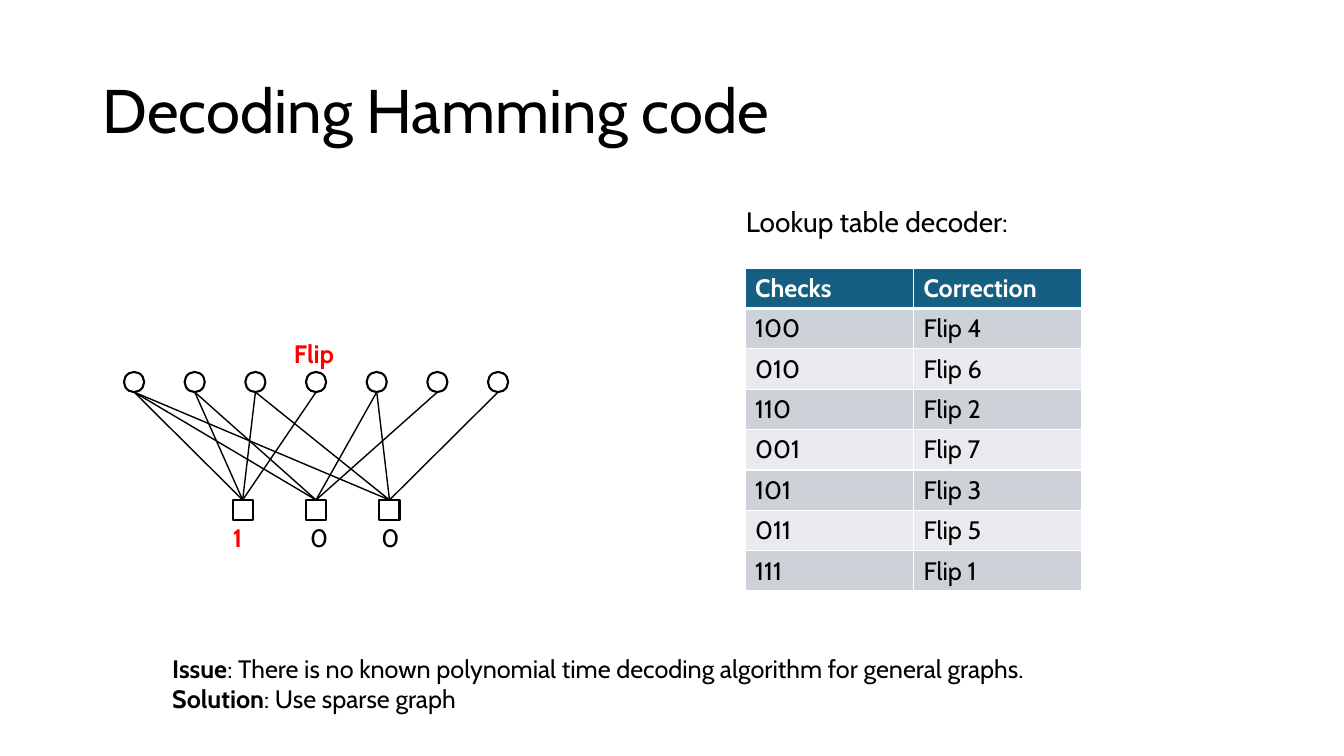
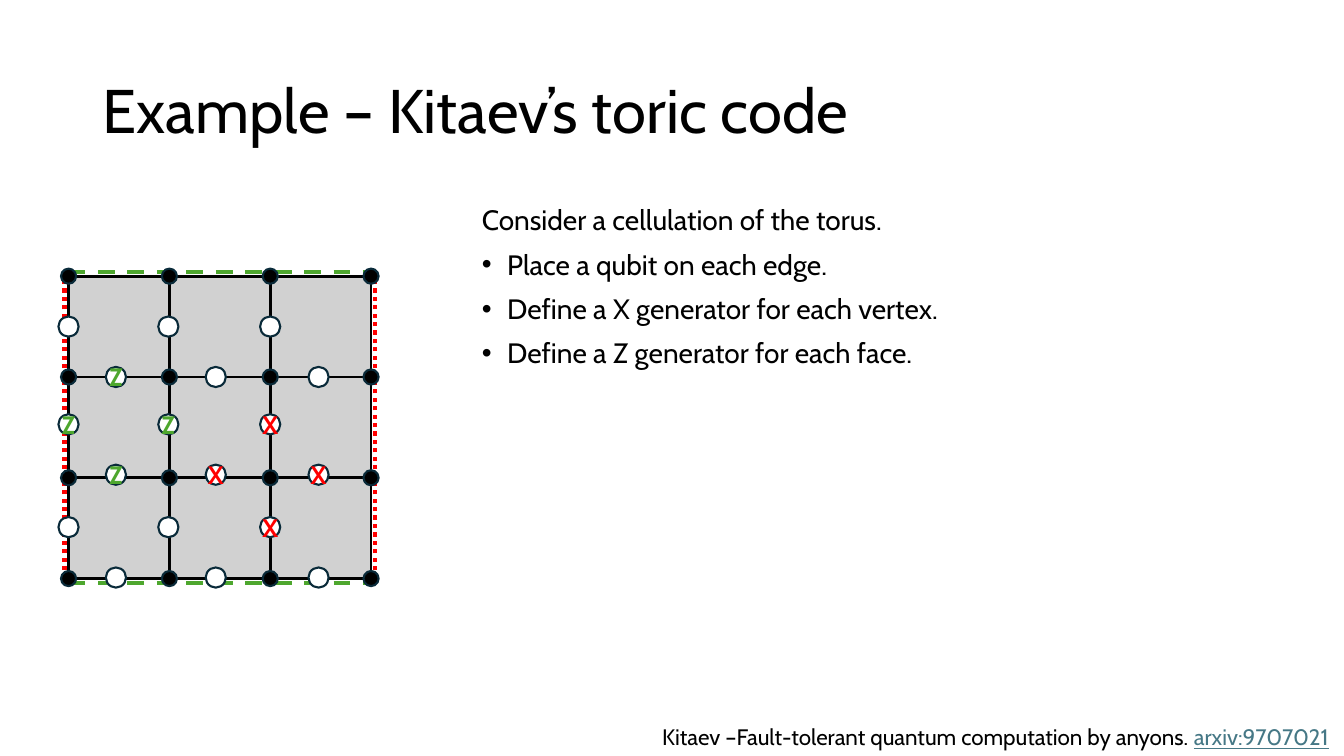
"""Build two slides on decoding the Hamming code and on the toric code."""
from dataclasses import dataclass

from lxml import etree
from pptx import Presentation
from pptx import util as u
from pptx.dml.color import RGBColor
from pptx.enum import dml, shapes, text
from pptx.oxml import ns, xmlchemy

FONT = "Cabin"
BLACK = RGBColor(0x00, 0x00, 0x00)
WHITE = RGBColor(0xFF, 0xFF, 0xFF)
RED = RGBColor(0xFF, 0x00, 0x00)
GREEN = RGBColor(0x4E, 0xA7, 0x2E)
NAVY = RGBColor(0x09, 0x2A, 0x39)
TEAL = RGBColor(0x15, 0x60, 0x82)
LINK = RGBColor(0x46, 0x78, 0x86)
FACE = RGBColor(0xD1, 0xD1, 0xD1)
BANDS = (RGBColor(0xE8, 0xEA, 0xED), RGBColor(0xCC, 0xD2, 0xD8))

NODE = 0.2
VERTEX = 0.15
TITLE_ONLY, TITLE_AND_BODY = 5, 1
CHECK_BITS = ((0, 1, 2, 3), (0, 1, 4, 5), (0, 2, 4, 6))
LOOKUP = (("Checks", "Correction"), ("100", "Flip 4"), ("010", "Flip 6"),
          ("110", "Flip 2"), ("001", "Flip 7"), ("101", "Flip 3"),
          ("011", "Flip 5"), ("111", "Flip 1"))


@dataclass
class Box:
    """A region of a slide, in inches."""

    left: float
    top: float
    width: float
    height: float

    def emu(self):
        """Return the region as lengths for python-pptx."""
        return [u.Inches(n) for n in (self.left, self.top, self.width, self.height)]

    def point(self, column, row, columns, rows):
        """Return the point at a column and row of a grid over the region."""
        return (self.left + column * self.width / columns,
                self.top + row * self.height / rows)


SLIDE = Box(0, 0, 13.33, 7.5)
TITLE = Box(0.92, 0.4, 11.5, 1.45)


def around(centre, width, height):
    """Return the box of a given size about a point."""
    return Box(centre[0] - width / 2, centre[1] - height / 2, width, height)


def add_span(para, words, size, color=BLACK, bold=False, underline=False):
    """Add one formatted run to a paragraph."""
    span = para.add_run()
    span.text = words
    span.font.name = FONT
    span.font.size = u.Pt(size)
    span.font.color.rgb = color
    span.font.bold = bold
    if underline:
        span.font.underline = True


def add_text(page, box, lines, size, align=text.PP_ALIGN.LEFT):
    """Add a text box; each line is a list of (words, format) spans."""
    area = page.shapes.add_textbox(*box.emu())
    area.text_frame.word_wrap = True
    for index, spans in enumerate(lines):
        para = area.text_frame.paragraphs[0] if index == 0 else area.text_frame.add_paragraph()
        para.alignment = align
        for words, style in spans:
            add_span(para, words, size, **style)
    return area


def add_label(page, centre, words, color, bold=True, width=0.4):
    """Add a short centred label about a point."""
    area = add_text(page, around(centre, width, 0.4), [[(words, {"color": color, "bold": bold})]],
                    18, text.PP_ALIGN.CENTER)
    area.text_frame.margin_left = area.text_frame.margin_right = 0


def add_mark(parent, kind, box, fill, outline):
    """Add a filled preset shape with a thin outline."""
    mark = parent.shapes.add_shape(kind, *box.emu())
    mark.shadow.inherit = False
    mark.fill.solid()
    mark.fill.fore_color.rgb = fill
    mark.line.color.rgb = outline
    mark.line.width = u.Pt(1.5)


def add_line(parent, start, end, weight, color=BLACK, dash=None):
    """Add a straight line between two points."""
    ends = [u.Inches(n) for n in (*start, *end)]
    line = parent.shapes.add_connector(shapes.MSO_CONNECTOR.STRAIGHT, *ends)
    line.line.color.rgb = color
    line.line.width = u.Pt(weight)
    if dash:
        line.line.dash_style = dash
    etree.SubElement(line._element.spPr, ns.qn("a:effectLst"))


def add_page(deck, layout, title):
    """Add a slide with the shared title style."""
    page = deck.slides.add_slide(deck.slide_layouts[layout])
    head = page.shapes.title
    head.left, head.top, head.width, head.height = TITLE.emu()
    frame = head.text_frame
    frame.auto_size = text.MSO_AUTO_SIZE.NONE
    frame.vertical_anchor = text.MSO_ANCHOR.MIDDLE
    para = frame.paragraphs[0]
    para.alignment = text.PP_ALIGN.LEFT
    para.line_spacing = 0.9
    add_span(para, title, 44)
    return page


def fill_body(page, box, lines):
    """Fill the body placeholder with a lead line and bullets below it."""
    body = page.placeholders[1]
    body.left, body.top, body.width, body.height = box.emu()
    frame = body.text_frame
    frame.auto_size = text.MSO_AUTO_SIZE.NONE
    for index, words in enumerate(lines):
        para = frame.add_paragraph() if index else frame.paragraphs[0]
        para.line_spacing = 0.9
        para.space_before = u.Pt(10)
        indent = u.Inches(0.25) if index else 0
        props = para._p.get_or_add_pPr()
        props.set("marL", str(indent))
        props.set("indent", str(-indent))
        if index:
            etree.SubElement(props, ns.qn("a:buFont"), typeface="Arial")
            etree.SubElement(props, ns.qn("a:buChar"), char="•")
        else:
            etree.SubElement(props, ns.qn("a:buNone"))
        add_span(para, words, 20)


def draw_tanner_graph(page, box):
    """Draw seven bits above three checks, joined by the check matrix."""
    graph = page.shapes.add_group_shape()
    bits = [box.point(column, 0, 6, 1) for column in range(7)]
    checks = [box.point(1.79 + 1.21 * column, 1, 6, 1) for column in range(3)]
    for (x, y), members in zip(checks, CHECK_BITS):
        for bit in members:
            add_line(graph, (x, y - NODE / 2), (bits[bit][0], bits[bit][1] + NODE / 2), 1)
    for kind, centres in ((shapes.MSO_SHAPE.OVAL, bits), (shapes.MSO_SHAPE.RECTANGLE, checks)):
        for centre in centres:
            add_mark(graph, kind, around(centre, NODE, NODE), WHITE, BLACK)
    add_label(page, (bits[3][0] - 0.02, bits[3][1] - 0.28), "Flip", RED, width=0.7)
    for (x, y), words, shift in zip(checks, "100", (-0.05, 0.03, 0.01)):
        flagged = words == "1"
        add_label(page, (x + shift, y + 0.27), words, RED if flagged else BLACK, flagged)


def set_borders(cell, bottom):
    """Give a cell white borders, with its own bottom weight."""
    props = cell._tc.get_or_add_tcPr()
    for index, (side, weight) in enumerate((("L", 1), ("R", 1), ("T", 1), ("B", bottom))):
        border = xmlchemy.OxmlElement(f"a:ln{side}")
        border.set("w", str(u.Pt(weight)))
        fill = etree.SubElement(border, ns.qn("a:solidFill"))
        etree.SubElement(fill, ns.qn("a:srgbClr"), val=str(WHITE))
        props.insert(index, border)


def draw_lookup_table(page, box):
    """Draw the table of checks and corrections."""
    grid = page.shapes.add_table(len(LOOKUP), 2, *box.emu()).table
    for row, record in enumerate(LOOKUP):
        header = row == 0
        for column, words in enumerate(record):
            cell = grid.cell(row, column)
            cell.fill.solid()
            cell.fill.fore_color.rgb = TEAL if header else BANDS[row % 2]
            set_borders(cell, 3 if header or row == 0 else 1)
            add_span(cell.text_frame.paragraphs[0], words, 18,
                     WHITE if header else BLACK, header)


def draw_lattice(page, box):
    """Draw the glued square lattice with its vertices and edges."""
    sheet = page.shapes.add_group_shape()
    add_mark(sheet, shapes.MSO_SHAPE.RECTANGLE, box, FACE, NAVY)
    right, bottom = box.left + box.width, box.top + box.height
    gap = 0.04
    for y in (box.top - gap, bottom + gap):
        add_line(sheet, (box.left, y), (right, y), 3, GREEN, dml.MSO_LINE.DASH)
    for x in (box.left - gap, right + gap):
        add_line(sheet, (x, bottom), (x, box.top), 3, RED, dml.MSO_LINE.ROUND_DOT)
    net = page.shapes.add_group_shape()
    trim = VERTEX / 2
    for major in range(4):
        for minor in range(3):
            x, y = box.point(minor, major, 3, 3)
            add_line(net, (x + trim, y), (x + box.width / 3 - trim, y), 2)
            x, y = box.point(major, minor, 3, 3)
            add_line(net, (x, y + trim), (x, y + box.height / 3 - trim), 2)
    for column in range(4):
        for row in range(4):
            centre = box.point(column, row, 3, 3)
            add_mark(net, shapes.MSO_SHAPE.OVAL, around(centre, VERTEX, VERTEX), BLACK, NAVY)


def draw_qubits(page, box):
    """Draw a qubit on each edge and letter one X and one Z generator."""
    upright = [[box.point(x, y, 3, 3) for x in (0, 0.99, 2)] for y in (0.5, 1.47, 2.49)]
    level = [[box.point(x, y, 3, 3) for x in (0.47, 1.46, 2.48)] for y in (1, 1.97, 2.99)]
    qubits = page.shapes.add_group_shape()
    for row in upright + level:
        for centre in row:
            add_mark(qubits, shapes.MSO_SHAPE.OVAL, around(centre, NODE, NODE), WHITE, NAVY)
    star = (level[1][1], upright[1][2], level[1][2], upright[2][2])
    plaquette = (upright[1][0], level[0][0], upright[1][1], level[1][0])
    for words, color, centres in (("X", RED, star), ("Z", GREEN, plaquette)):
        for centre in centres:
            add_label(page, centre, words, color)


def build_hamming_page(deck):
    """Build the slide on decoding the Hamming code."""
    page = add_page(deck, TITLE_ONLY, "Decoding Hamming code")
    draw_tanner_graph(page, Box(1.33, 3.79, 3.61, 1.27))
    draw_lookup_table(page, Box(7.39, 2.66, 3.34, 3.2))
    add_text(page, Box(7.3, 1.98, 3.12, 0.44), [[("Lookup table decoder:", {})]], 20)
    strong = {"bold": True}
    add_text(page, Box(1.61, 6.43, 8.97, 0.71), [
        [("Issue", strong),
         (": There is no known polynomial time decoding algorithm for general graphs.", {})],
        [("Solution", strong), (": Use sparse graph", {})]], 18)


def build_toric_page(deck):
    """Build the slide on the toric code."""
    page = add_page(deck, TITLE_AND_BODY, "Example – Kitaev’s toric code")
    fill_body(page, Box(4.68, 2, 7.74, 4.76), (
        "Consider a cellulation of the torus.", "Place a qubit on each edge.",
        "Define a X generator for each vertex.", "Define a Z generator for each face."))
    lattice = Box(0.68, 2.74, 3, 3)
    draw_lattice(page, lattice)
    draw_qubits(page, lattice)
    add_text(page, Box(6.47, 7.13, SLIDE.width - 6.47, 0.37), [[
        ("Kitaev –Fault-tolerant quantum computation by anyons. ", {}),
        ("arxiv:9707021", {"color": LINK, "underline": True})]], 16)


def main():
    """Build and save the deck."""
    deck = Presentation()
    deck.slide_width, deck.slide_height = SLIDE.emu()[2:]
    build_hamming_page(deck)
    build_toric_page(deck)
    deck.save("out.pptx")


if __name__ == "__main__":
    main()
